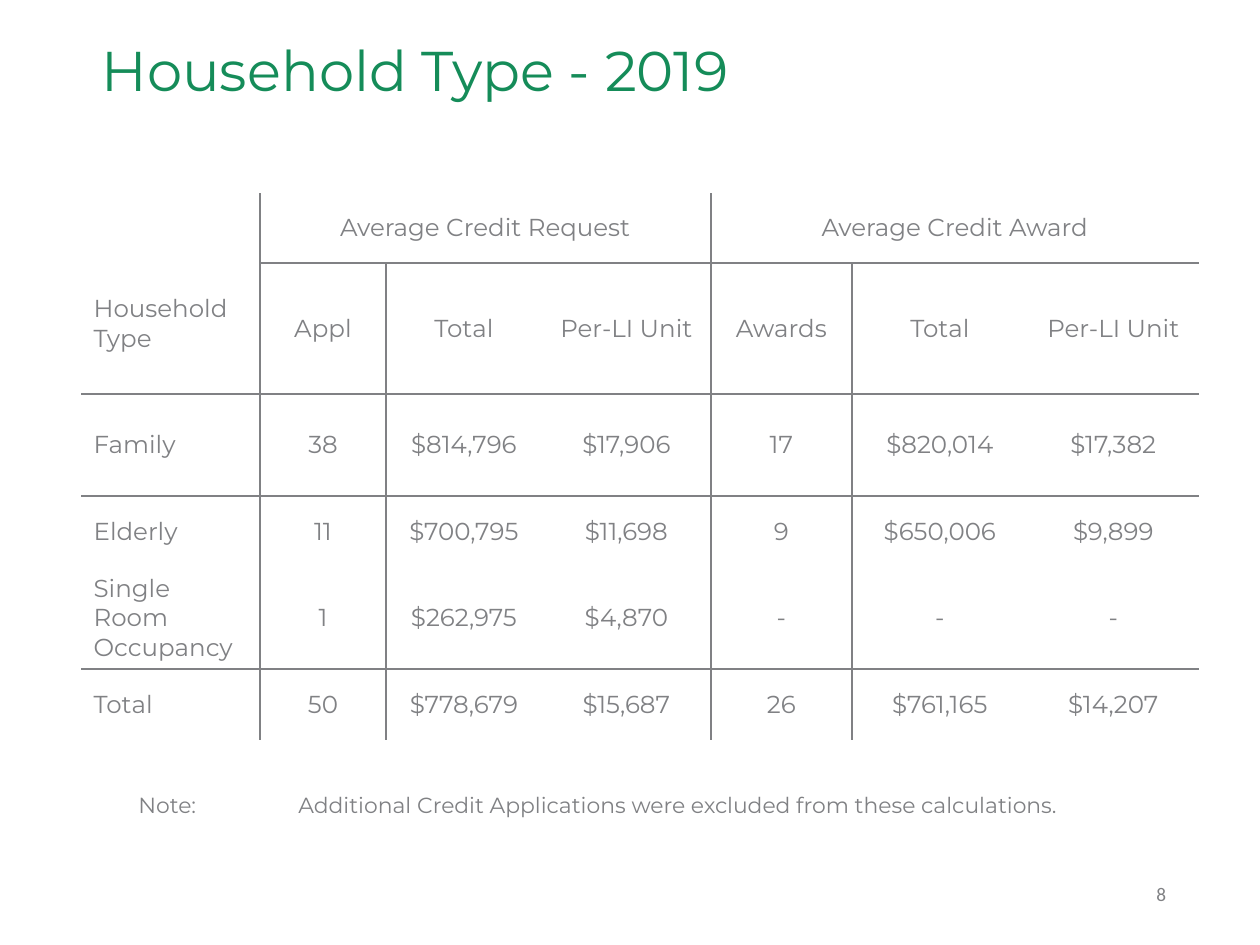
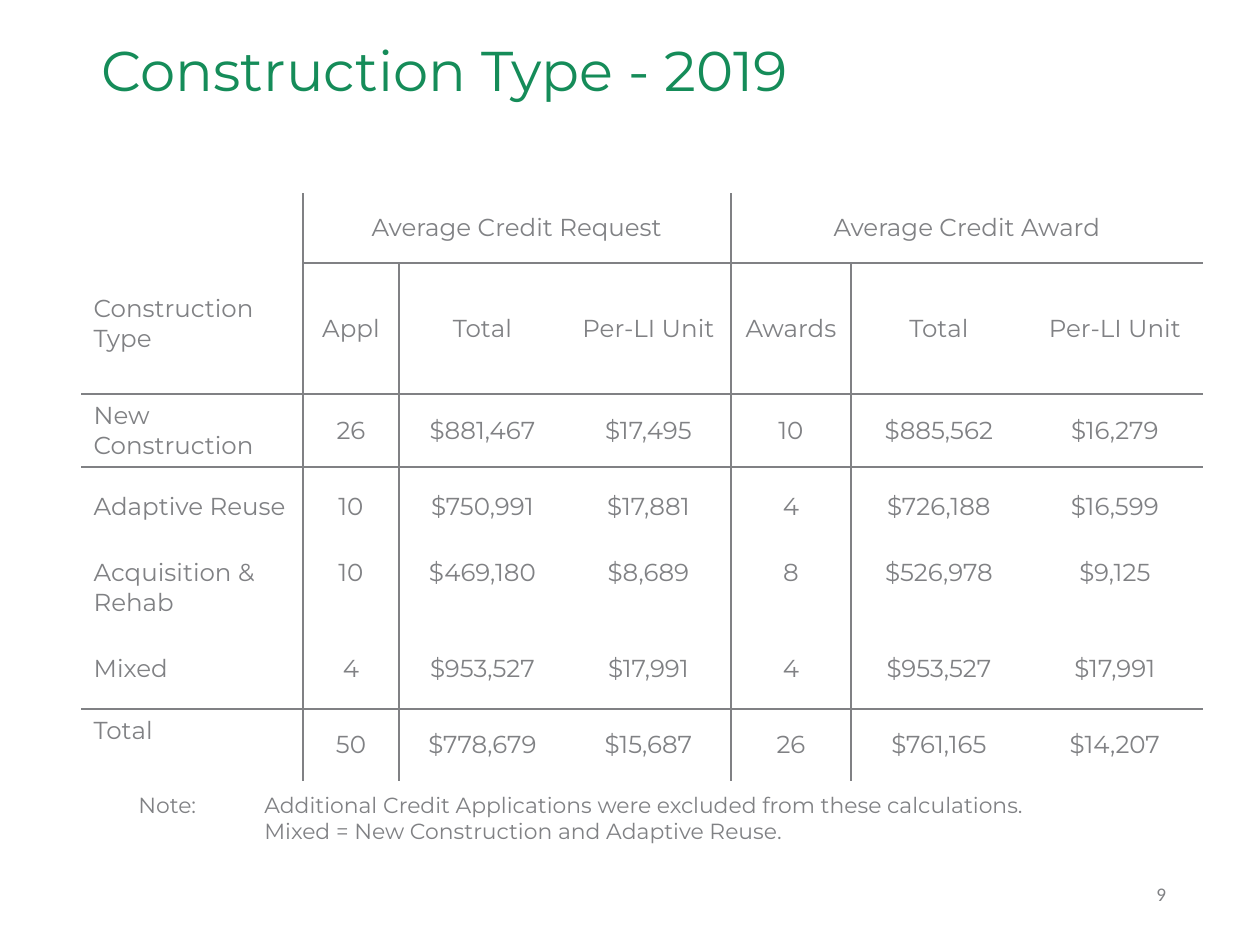
import lxml.etree
import pptx
import pptx.dml.color
import pptx.enum.text
import pptx.oxml.ns
import pptx.util

GREEN, GREY = "158C59", "808184"
FACE = "Montserrat"
PLAIN = "{2D5ABB26-0587-4C30-8999-92F81FD0307C}"
ALIGN = pptx.enum.text.PP_ALIGN
ANCHOR = pptx.enum.text.MSO_ANCHOR
HEADS = [
    ["", "Average Credit Request", "", "", "Average Credit Award", "", ""],
    ["", "Appl", "Total", "Per-LI Unit", "Awards", "Total", "Per-LI Unit"],
]
MERGES = [((0, 0), (1, 0)), ((0, 1), (0, 3)), ((0, 4), (0, 6))]
NOTE = "Note:\tAdditional Credit Applications were excluded from these calculations."

HOUSE = {
    "title": "Household Type - 2019",
    "label": "Household Type",
    "page": "8",
    "cols": [179, 126, 156, 169, 141, 176, 171],
    "rows": [70, 131, 102, 71, 102, 71],
    "lifts": [],
    "body": [
        ["Family", "38", "$814,796", "$17,906", "17", "$820,014", "$17,382"],
        ["Elderly", "11", "$700,795", "$11,698", "9", "$650,006", "$9,899"],
        ["Single Room Occupancy", "1", "$262,975", "$4,870", "-", "-", "-"],
        ["Total", "50", "$778,679", "$15,687", "26", "$761,165", "$14,207"],
    ],
    "notes": [NOTE],
    "tab": 160,
}
BUILD = {
    "title": "Construction Type - 2019",
    "label": "Construction Type",
    "page": "9",
    "cols": [222, 96, 167, 165, 120, 176, 176],
    "rows": [70, 131, 73, 80, 81, 81, 71],
    "lifts": [(4, col) for col in range(1, 7)] + [(6, 0)],
    "body": [
        ["New Construction", "26", "$881,467", "$17,495", "10", "$885,562", "$16,279"],
        ["Adaptive Reuse", "10", "$750,991", "$17,881", "4", "$726,188", "$16,599"],
        ["Acquisition & Rehab", "10", "$469,180", "$8,689", "8", "$526,978", "$9,125"],
        ["Mixed", "4", "$953,527", "$17,991", "4", "$953,527", "$17,991"],
        ["Total", "50", "$778,679", "$15,687", "26", "$761,165", "$14,207"],
    ],
    "notes": [NOTE, "\tMixed = New Construction and Adaptive Reuse."],
    "tab": 126,
}


def px(size):
    return pptx.util.Emu(round(size * 914400 / 126))


def tint(code):
    return pptx.dml.color.RGBColor.from_string(code)


def apply(item, values):
    for name, value in values.items():
        setattr(item, name, value)


def style(para, size, code=GREY, face=FACE, **values):
    apply(para, values)
    apply(para.font, {"size": pptx.util.Pt(size), "name": face})
    para.font.color.rgb = tint(code)


def place(shape, box):
    apply(shape, dict(zip(("left", "top", "width", "height"), map(px, box))))


def head(slide, box, text):
    title = slide.shapes.title
    place(title, box)
    frame = title.text_frame
    frame.text = text
    apply(frame, {"vertical_anchor": ANCHOR.TOP, "word_wrap": True})
    style(frame.paragraphs[0], 32, GREEN, alignment=ALIGN.LEFT, line_spacing=0.9)


def rule(cell, sides):
    props = cell._tc.get_or_add_tcPr()
    for spot, side in enumerate(sides):
        props.insert(spot, pptx.oxml.parse_xml(
            f'<a:ln{side} {pptx.oxml.ns.nsdecls("a")} w="12700"><a:solidFill>'
            f'<a:srgbClr val="{GREY}"/></a:solidFill></a:ln{side}>'))


def edges(row, col, cell, count):
    last = row + cell.span_height - 1
    end = col + cell.span_width - 1

    def lined(line):
        return line in (1, count - 2) or (line == 0 and col > 0)

    tests = {"L": col - 1 in (0, 3), "R": end in (0, 3),
             "T": lined(row - 1), "B": lined(last)}
    return [side for side, drawn in tests.items() if drawn]


def grid(slide, box, data):
    texts = HEADS + data["body"]
    count = len(texts)
    left, top = box
    size = (sum(data["cols"]), sum(data["rows"]))
    frame = slide.shapes.add_table(count, 7, *map(px, (left, top, *size)))
    table = frame.table
    apply(table, {"first_row": False, "horz_banding": False})
    table._tbl.tblPr.find(pptx.oxml.ns.qn("a:tableStyleId")).text = PLAIN
    for col, width in zip(table.columns, data["cols"]):
        col.width = px(width)
    for row, height in zip(table.rows, data["rows"]):
        row.height = px(height)
    for start, end in MERGES:
        table.cell(*start).merge(table.cell(*end))
    for row, line in enumerate(texts):
        for col, text in enumerate(line):
            cell = table.cell(row, col)
            cell.fill.background()
            cell.vertical_anchor = ANCHOR.MIDDLE
            rule(cell, edges(row, col, cell, count))
            cell.text = data["label"] if (row, col) == (0, 0) else text
            side = ALIGN.CENTER if col else ALIGN.LEFT
            style(cell.text_frame.paragraphs[0], 14, alignment=side)
    table.cell(0, 0).margin_top = px(66)
    for spot in data["lifts"]:
        table.cell(*spot).margin_bottom = px(36)


def write(slide, box, lines, size, face=FACE, tab=None):
    shape = slide.shapes.add_textbox(*map(px, box))
    frame = shape.text_frame
    frame.word_wrap = True
    frame.text = "\n".join(lines)
    for para in frame.paragraphs:
        if tab:
            props = para._p.get_or_add_pPr()
            tabs = lxml.etree.SubElement(props, pptx.oxml.ns.qn("a:tabLst"))
            lxml.etree.SubElement(tabs, pptx.oxml.ns.qn("a:tab"),
                                  pos=str(px(tab)), algn="l")
        style(para, size, face=face)


def sheet(deck, data):
    slide = deck.slides.add_slide(deck.slide_layouts[5])
    write(slide, (1144, 876, 48, 37), [data["page"]], 11, "Calibri")
    head(slide, (89, 37, 1057, 140), data["title"])
    grid(slide, (81, 193), data)
    lines = data["notes"]
    write(slide, (126, 785, 1048, 13 + 26 * len(lines)), lines, 12.5, tab=data["tab"])


def main():
    deck = pptx.Presentation()
    apply(deck, {"slide_width": px(1260), "slide_height": px(945)})
    for data in (HOUSE, BUILD):
        sheet(deck, data)
    deck.save("out.pptx")


if __name__ == "__main__":
    main()
